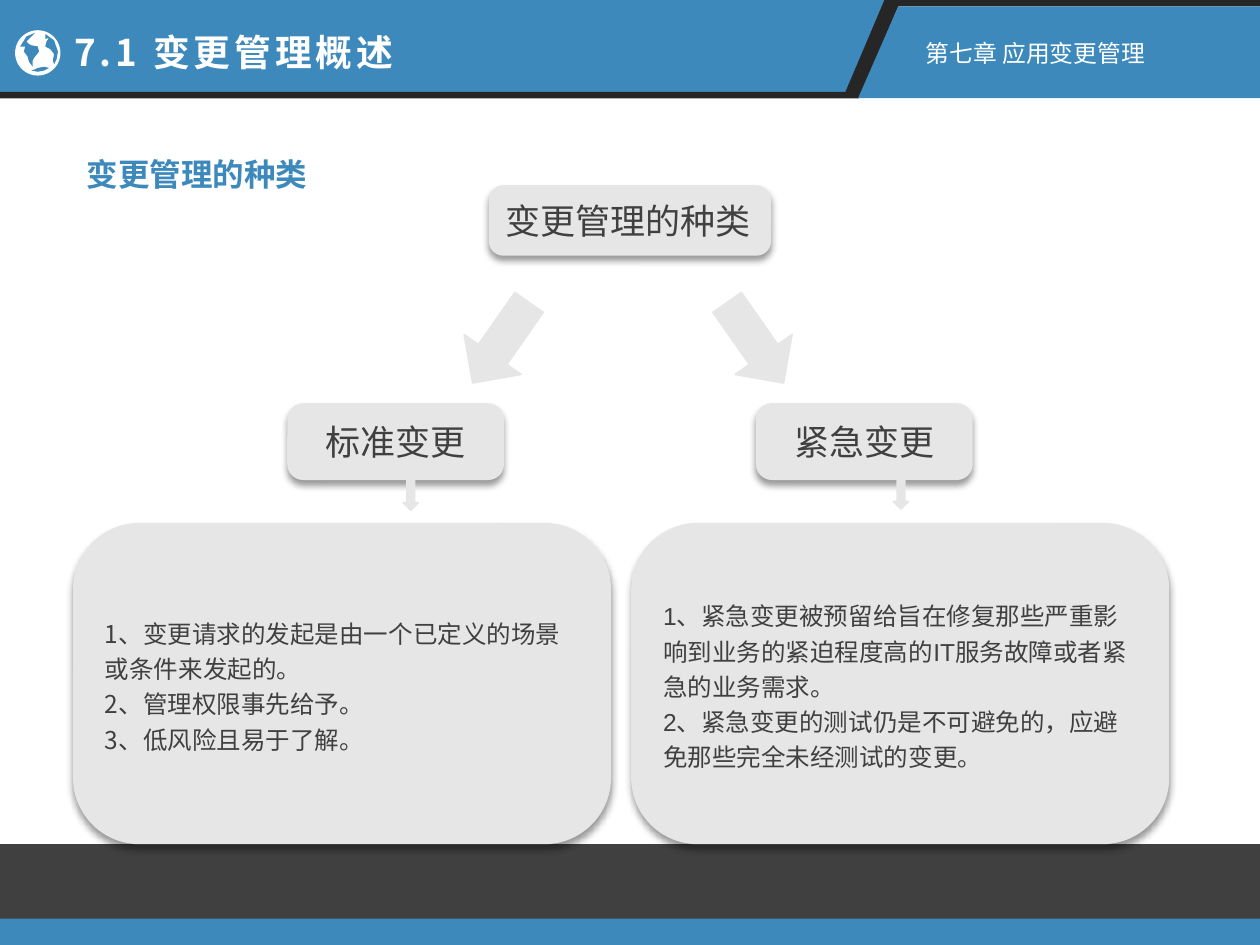
from dataclasses import dataclass
from lxml.etree import SubElement
from pptx import Presentation
from pptx.dml.color import RGBColor
from pptx.enum.shapes import MSO_SHAPE
from pptx.enum.text import MSO_ANCHOR, MSO_AUTO_SIZE, PP_ALIGN
from pptx.oxml.ns import qn
from pptx.util import Inches, Pt


@dataclass(frozen=True)
class Theme:
    blue: str = "3D89BC"
    dark: str = "404040"
    black: str = "262626"
    grey: str = "E6E6E6"
    white: str = "FFFFFF"
    cjk: str = "Noto Sans CJK SC"
    latin: str = "Arial"
    title: float = 21
    heading: float = 18
    box: float = 20
    body: float = 14
    chapter: float = 13.6


T = Theme()


def write(s, text, size, color=T.dark, font=T.latin, bold=False, spacing=0,
          align=PP_ALIGN.LEFT, leading=1.0, wrap=True, anchor=MSO_ANCHOR.MIDDLE):
    tf = s.text_frame
    tf.word_wrap = wrap
    tf.vertical_anchor = anchor
    if not wrap:
        tf.auto_size = MSO_AUTO_SIZE.SHAPE_TO_FIT_TEXT
    for i, line in enumerate(text.split("\n")):
        p = tf.add_paragraph() if i else tf.paragraphs[0]
        p.alignment = align
        p.line_spacing = leading
        r = p.add_run()
        r.text = line
        r.font.size = Pt(size)
        r.font.bold = bold
        r.font.name = font
        r.font.color.rgb = RGBColor.from_string(color)
        rPr = r.font._element
        SubElement(rPr, qn("a:ea")).set("typeface", T.cjk)
        if spacing:
            rPr.set("spc", str(int(spacing * 100)))


def paint(s, color, outlined=False, shadow=False):
    s.fill.solid()
    s.fill.fore_color.rgb = RGBColor.from_string(color)
    if outlined:
        s.line.color.rgb = RGBColor.from_string(color)
        s.line.width = Pt(1)
    else:
        s.line.fill.background()
    s.shadow.inherit = False
    if shadow:
        effects = s._element.spPr.find(qn("a:effectLst"))
        outer = SubElement(effects, qn("a:outerShdw"), blurRad=str(Pt(4)),
                           dist=str(Pt(3)), dir="5400000", algn="t", rotWithShape="0")
        black = SubElement(outer, qn("a:srgbClr"), val="000000")
        SubElement(black, qn("a:alpha"), val="40000")


prs = Presentation()
prs.slide_width, prs.slide_height = Inches(10), Inches(7.5)
shapes = prs.slides.add_slide(prs.slide_layouts[6]).shapes

for top, height, color in [(6.7, 0.6, T.dark), (7.29, 0.21, T.blue)]:
    s = shapes.add_shape(MSO_SHAPE.RECTANGLE, 0, Inches(top), Inches(10), Inches(height))
    paint(s, color)

s = shapes.add_shape(MSO_SHAPE.OVAL, Inches(0.12), Inches(0.24), Inches(0.36), Inches(0.36))
paint(s, T.white)
globe = s

banner = [
    (T.blue, [(0, 0), (7.05, 0), (6.74, 0.73), (0, 0.73)]),
    (T.black, [(7.09, 0), (10, 0), (10, 0.05), (7.13, 0.05), (6.82, 0.78),
               (0, 0.78), (0, 0.73), (6.71, 0.73), (7.02, 0)]),
    (T.blue, [(7.13, 0.05), (10, 0.05), (10, 0.78), (6.81, 0.78)]),
]
continents = [
    (T.blue, [(0.46, 0.41), (0.45, 0.47), (0.43, 0.51), (0.42, 0.48), (0.43, 0.43),
              (0.4, 0.39), (0.36, 0.37), (0.37, 0.33), (0.39, 0.3), (0.36, 0.31),
              (0.36, 0.27), (0.43, 0.32)]),
    (T.blue, [(0.28, 0.26), (0.26, 0.28), (0.24, 0.3), (0.21, 0.33), (0.23, 0.35),
              (0.25, 0.36), (0.3, 0.37), (0.31, 0.41), (0.27, 0.46), (0.26, 0.48),
              (0.26, 0.53), (0.23, 0.49), (0.22, 0.45), (0.19, 0.41), (0.2, 0.37),
              (0.16, 0.37), (0.21, 0.29)]),
    (T.blue, [(0.25, 0.56), (0.28, 0.55), (0.3, 0.54), (0.35, 0.53), (0.39, 0.54),
              (0.35, 0.56), (0.3, 0.57)]),
]
for color, points in banner + continents:
    if points is continents[0][1]:
        shapes._spTree.append(globe._element)
    outline = [(Inches(x), Inches(y)) for x, y in points]
    builder = shapes.build_freeform(*outline[0], scale=1.0)
    builder.add_line_segments(outline[1:], close=True)
    paint(builder.convert_to_shape(), color)

labels = [
    (0.49, 0.19, 2.9, 0.45, "7.1 变更管理概述",
     dict(size=T.title, color=T.white, font=T.cjk, bold=True, spacing=2.2)),
    (7.25, 0.26, 1.96, 0.33, "第七章 应用变更管理", dict(size=T.chapter, color=T.white)),
    (0.59, 1.18, 1.95, 0.4, "变更管理的种类",
     dict(size=T.heading, color=T.blue, font=T.cjk, bold=True)),
]
for x, y, w, h, text, style in labels:
    s = shapes.add_textbox(Inches(x), Inches(y), Inches(w), Inches(h))
    write(s, text, wrap=False, anchor=MSO_ANCHOR.TOP, **style)

standard = "1、变更请求的发起是由一个已定义的场景或条件来发起的。\n2、管理权限事先给予。\n3、低风险且易于了解。"
urgent = ("1、紧急变更被预留给旨在修复那些严重影响到业务的紧迫程度高的IT服务故障或者紧急的业务需求。\n"
          "2、紧急变更的测试仍是不可避免的，应避免那些完全未经测试的变更。")
branch = dict(size=T.box, align=PP_ALIGN.CENTER)
detail = dict(size=T.body, leading=1.2)
boxes = [
    (3.88, 1.47, 2.24, 0.56, "变更管理的种类", dict(size=T.box)),
    (2.28, 3.2, 1.72, 0.61, "标准变更", branch),
    (6, 3.2, 1.72, 0.61, "紧急变更", branch),
    (0.58, 4.15, 4.27, 2.55, standard, dict(font=T.cjk, **detail)),
    (5.01, 4.15, 4.27, 2.55, urgent, detail),
]
for x, y, w, h, text, style in boxes:
    s = shapes.add_shape(MSO_SHAPE.ROUNDED_RECTANGLE, Inches(x), Inches(y), Inches(w), Inches(h))
    s.adjustments[0] = 0.207
    paint(s, T.grey, shadow=True)
    write(s, text, **style)

arrows = [
    (5.72, 2.33, 0.55, 0.78, 325),
    (3.7, 2.33, 0.55, 0.78, 35),
    (3.2, 3.71, 0.12, 0.34, 0),
    (7.09, 3.7, 0.12, 0.34, 0),
]
for x, y, w, h, angle in arrows:
    s = shapes.add_shape(MSO_SHAPE.DOWN_ARROW, Inches(x), Inches(y), Inches(w), Inches(h))
    s.rotation = angle
    paint(s, T.grey, outlined=True)

prs.save("out.pptx")
